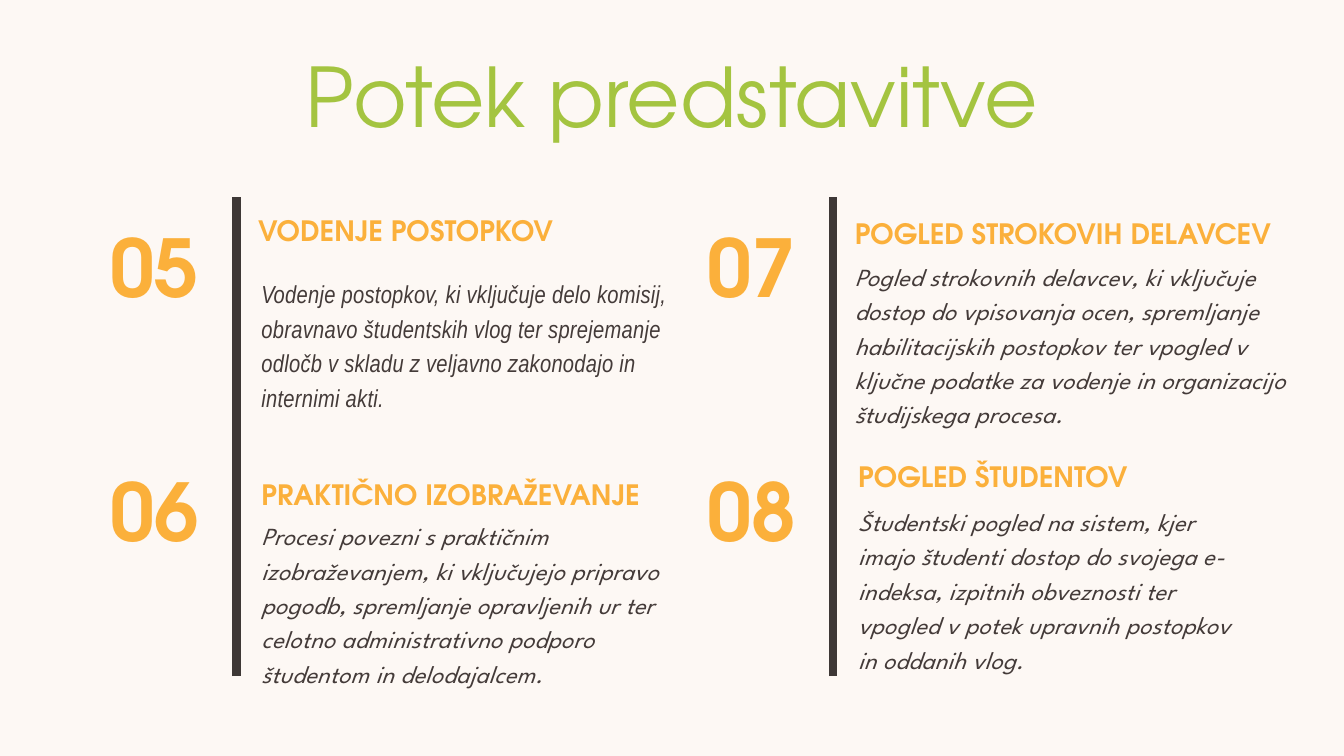
import pptx
import pptx.util
import pptx.dml.color
import pptx.enum.shapes
import pptx.enum.text
import pptx.oxml.ns
import lxml.etree

RGBColor = pptx.dml.color.RGBColor
CREAM = RGBColor(0xFD, 0xF8, 0xF4)
GREEN = RGBColor(0xA4, 0xC4, 0x40)
ORANGE = RGBColor(0xFB, 0xB0, 0x3B)
BROWN = RGBColor(0x44, 0x3B, 0x39)
DARK = RGBColor(0x3E, 0x38, 0x36)

DISPLAY = "TeX Gyre Adventor"
READING = "League Spartan"
NARROW = "Arial Narrow"

COLUMNS, ROWS = 20, 11.25  # one grid unit is one inch
ALIGN = pptx.enum.text.PP_ALIGN

DIVIDERS = (3.52, 12.4)
DIVIDER_TOP, DIVIDER_BOTTOM = 2.93, 10.06
NUMBER_OFFSET = -2.1  # from the divider of the same half
NUMBER_ROWS = (3, 6.64)

# half, row, number, heading, heading place, text, text place, text font
TOPICS = (
    (0, 0, "05", "VODENJE POSTOPKOV", (3.84, 3.1, 5.57, 0.56),
     "Vodenje postopkov, ki vključuje delo komisij, obravnavo študentskih vlog "
     "ter sprejemanje odločb v skladu z veljavno zakonodajo in internimi akti.",
     (3.89, 4.08, 6.41, 2.02), NARROW),
    (0, 1, "06", "PRAKTIČNO IZOBRAŽEVANJE", (3.89, 7.02, 6.25, 0.56),
     "Procesi povezni s praktičnim izobraževanjem, ki vključujejo pripravo "
     "pogodb, spremljanje opravljenih ur ter celotno administrativno podporo "
     "študentom in delodajalcem.",
     (3.89, 7.68, 6.41, 2.53), READING),
    (1, 0, "07", "POGLED STROKOVIH DELAVCEV", (12.72, 3.14, 6.9, 0.56),
     "Pogled strokovnih delavcev, ki vključuje dostop do vpisovanja ocen, "
     "spremljanje habilitacijskih postopkov ter vpogled v ključne podatke za "
     "vodenje in organizacijo študijskega procesa.",
     (12.72, 3.82, 6.9, 2.53), READING),
    (1, 1, "08", "POGLED ŠTUDENTOV", (12.77, 6.75, 5.81, 0.56),
     "Študentski pogled na sistem, kjer imajo študenti dostop do svojega "
     "e-indeksa, izpitnih obveznosti ter vpogled v potek upravnih postopkov "
     "in oddanih vlog.",
     (12.77, 7.47, 5.81, 2.53), READING),
)


class AgendaSlide:
    """Holds the style and the current slide; places are in grid units."""

    def __init__(self, deck):
        self.column = deck.slide_width / COLUMNS
        self.row = deck.slide_height / ROWS
        self.slide = deck.slides.add_slide(deck.slide_layouts[5])
        background = self.slide.background.fill
        background.solid()
        background.fore_color.rgb = CREAM

    def lengths(self, left, top, width, height):
        return (round(left * self.column), round(top * self.row),
                round(width * self.column), round(height * self.row))

    def set_text(self, shape, text, size, leading, color, font=DISPLAY,
                 align=ALIGN.LEFT, bold=False, italic=False, tracking=0):
        frame = shape.text_frame
        frame.word_wrap = True
        frame.auto_size = pptx.enum.text.MSO_AUTO_SIZE.SHAPE_TO_FIT_TEXT
        frame.vertical_anchor = pptx.enum.text.MSO_ANCHOR.TOP
        frame.margin_left = frame.margin_right = 0
        frame.margin_top = frame.margin_bottom = 0
        paragraph = frame.paragraphs[0]
        paragraph.alignment = align
        paragraph.line_spacing = pptx.util.Pt(leading)
        run = paragraph.add_run()
        run.text = text
        run.font.name = font
        run.font.size = pptx.util.Pt(size)
        run.font.bold = bold
        run.font.italic = italic
        run.font.color.rgb = color
        if tracking:
            run.font._element.set("spc", str(round(tracking * 100)))

    def title(self, text, place):
        title = self.slide.shapes.title
        title.left, title.top, title.width, title.height = self.lengths(*place)
        self.set_text(title, text, 88, 123.2, GREEN, align=ALIGN.CENTER)

    def text_box(self, place):
        return self.slide.shapes.add_textbox(*self.lengths(*place))

    def number(self, text, left, top):
        self.set_text(self.text_box((left, top, 1.77, 1.58)), text, 85.3, 119.5,
                      ORANGE, align=ALIGN.CENTER, bold=True)

    def heading(self, text, place):
        self.set_text(self.text_box(place), text, 30, 42, ORANGE, bold=True)

    def description(self, text, place, font):
        self.set_text(self.text_box(place), text, 26.3, 36.9, BROWN, font,
                      italic=True, tracking=0.3)

    def divider(self, x):
        left, top, _, height = self.lengths(
            x, DIVIDER_TOP, 0, DIVIDER_BOTTOM - DIVIDER_TOP)
        divider = self.slide.shapes.add_connector(
            pptx.enum.shapes.MSO_CONNECTOR.STRAIGHT,
            left, top + height, left, top)
        divider.line.color.rgb = DARK
        divider.line.width = pptx.util.Pt(9)
        lxml.etree.SubElement(divider._element.spPr,
                              pptx.oxml.ns.qn("a:effectLst"))


def main():
    deck = pptx.Presentation()
    deck.slide_width = pptx.util.Inches(COLUMNS)
    deck.slide_height = pptx.util.Inches(ROWS)
    agenda = AgendaSlide(deck)

    # Title
    agenda.title("Potek predstavitve", (1.81, 0.43, 16.37, 1.65))

    # Vertical dividers
    for x in DIVIDERS:
        agenda.divider(x)

    # Numbered topics
    for half, row, number, heading, heading_place, text, place, font in TOPICS:
        agenda.number(number, DIVIDERS[half] + NUMBER_OFFSET, NUMBER_ROWS[row])
        agenda.heading(heading, heading_place)
        agenda.description(text, place, font)

    deck.save("out.pptx")


if __name__ == "__main__":
    main()
